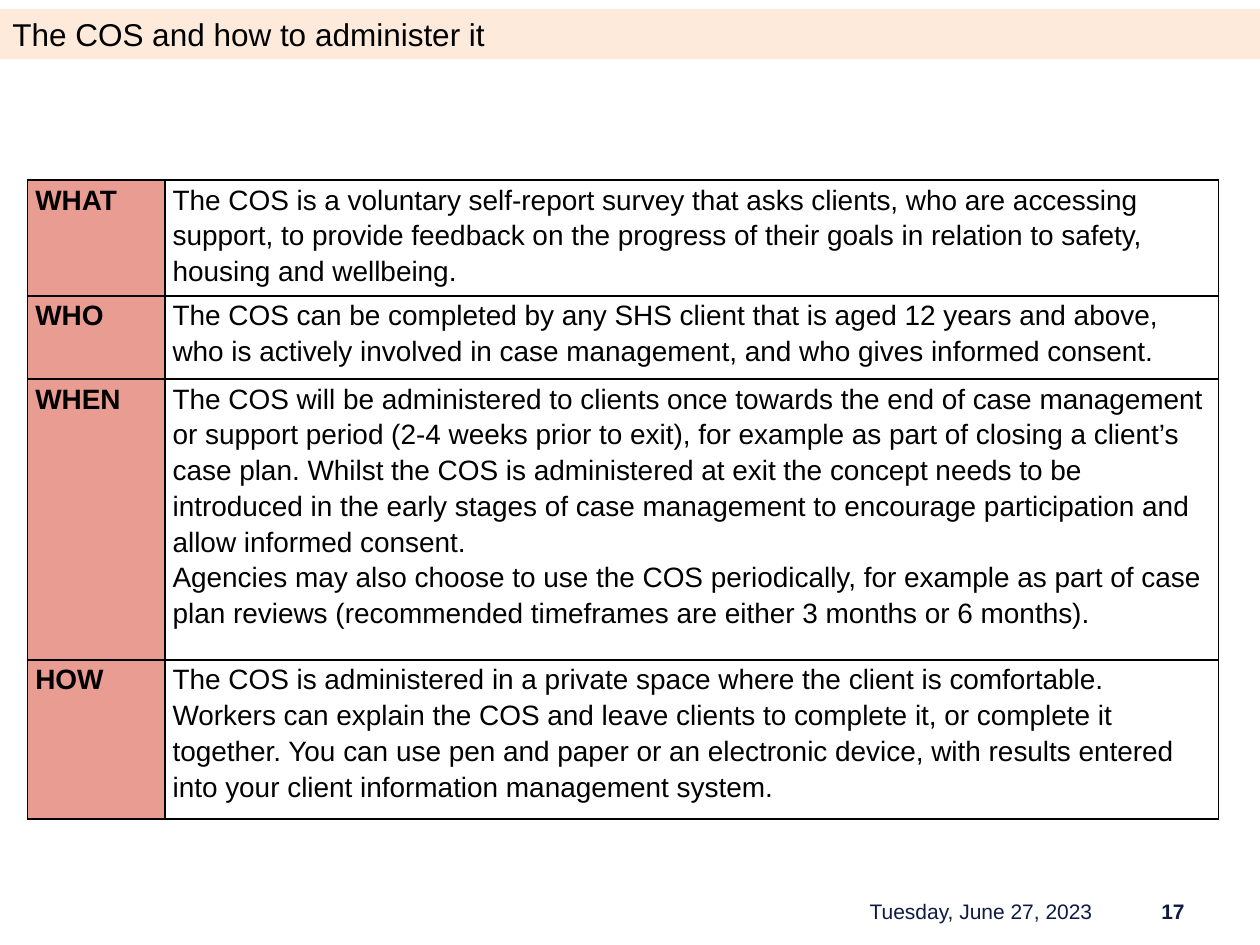
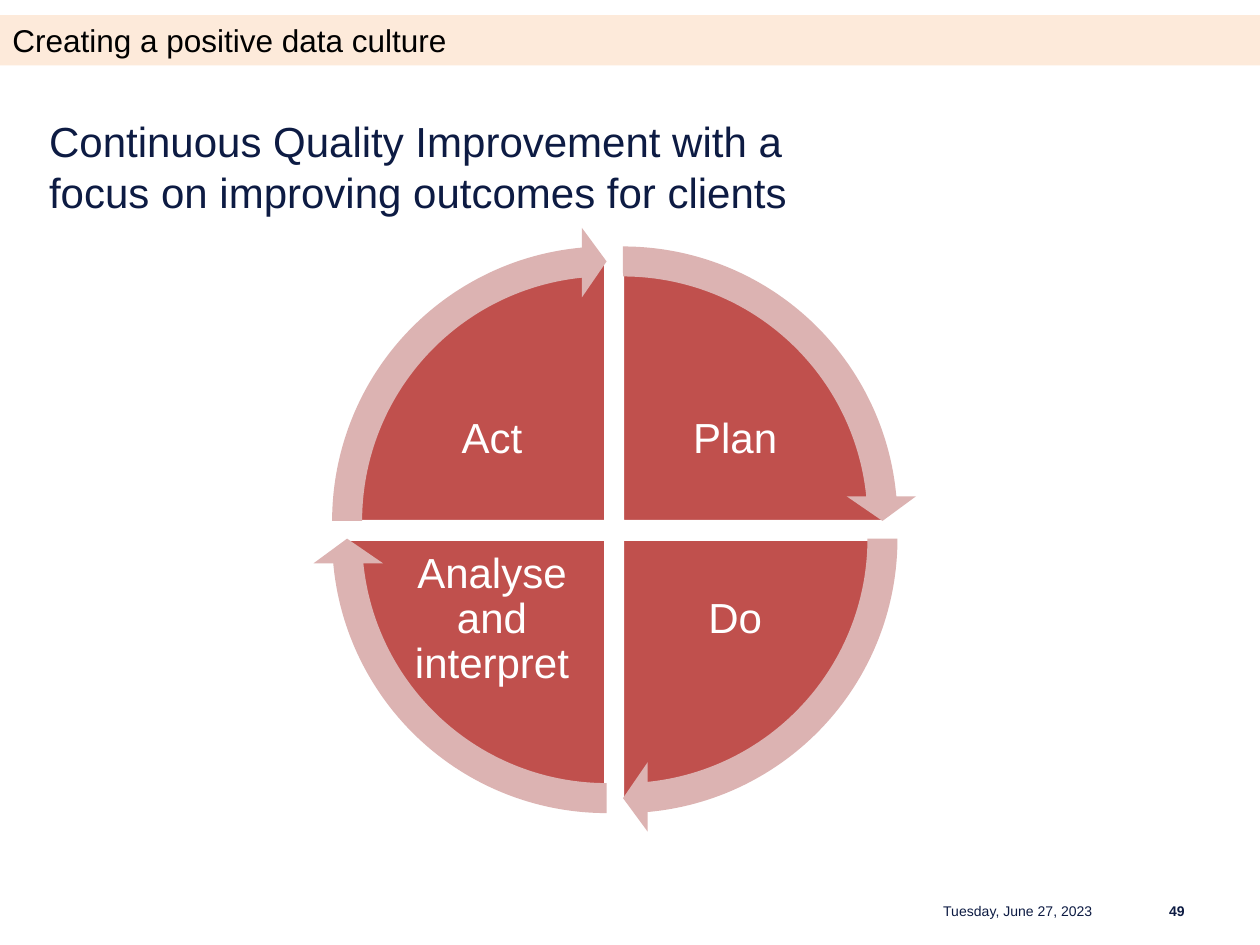
import pptx
import pptx.util
import pptx.dml.color
import pptx.enum.shapes
import pptx.enum.text
import pptx.oxml
import pptx.oxml.ns

Inches = pptx.util.Inches
Pt = pptx.util.Pt
RGBColor = pptx.dml.color.RGBColor
MSO_SHAPE = pptx.enum.shapes.MSO_SHAPE
PP_ALIGN = pptx.enum.text.PP_ALIGN
MSO_ANCHOR = pptx.enum.text.MSO_ANCHOR

FONT = "Arial"
NAVY = RGBColor(0x0D, 0x1B, 0x43)
BLACK = RGBColor(0, 0, 0)
WHITE = RGBColor(0xFF, 0xFF, 0xFF)
PEACH = RGBColor(0xFD, 0xEA, 0xDA)
SALMON = RGBColor(0xE9, 0x9C, 0x92)
BRICK = RGBColor(0xC0, 0x50, 0x4D)
ROSE = RGBColor(0xDC, 0xB3, 0xB2)


def write(frame, text, size, color, bold=False, align=PP_ALIGN.LEFT, spacing=1.0,
          anchor=MSO_ANCHOR.TOP):
    frame.word_wrap = True
    frame.vertical_anchor = anchor
    frame.text = text
    for paragraph in frame.paragraphs:
        paragraph.alignment = align
        paragraph.line_spacing = spacing
        for run in paragraph.runs:
            run.font.name = FONT
            run.font.size = Pt(size)
            run.font.bold = bold
            run.font.color.rgb = color


def add_plain_shape(slide, kind, left, top, width, height, fill):
    shape = slide.shapes.add_shape(kind, Inches(left), Inches(top), Inches(width), Inches(height))
    shape.shadow.inherit = False
    shape.fill.solid()
    shape.fill.fore_color.rgb = fill
    shape.line.fill.background()
    return shape


deck = pptx.Presentation()
deck.slide_width = Inches(10)
deck.slide_height = Inches(7.5)

pages = [
    ("The COS and how to administer it", 0.07, "17", 12, 1.0),
    ("Creating a positive data culture", 0.12, "49", 8, 0.9),
]
slides = []
for heading, band_top, number, footer_size, footer_spacing in pages:
    slide = deck.slides.add_slide(deck.slide_layouts[6])
    band = add_plain_shape(slide, MSO_SHAPE.RECTANGLE, 0, band_top, 10, 0.4, PEACH)
    write(band.text_frame, heading, 18, BLACK)
    for text, left, width, bold in [(number, 8.68, 0.82, True),
                                    ("Tuesday, June 27, 2023", 6.44, 2.33, False)]:
        footer = slide.shapes.add_textbox(Inches(left), Inches(7.12), Inches(width), Inches(0.23))
        write(footer.text_frame, text, footer_size, NAVY, bold, PP_ALIGN.RIGHT,
              footer_spacing, MSO_ANCHOR.MIDDLE)
    slides.append(slide)
survey_slide, culture_slide = slides

survey_rows = [
    ("WHAT", 0.84,
     "The COS is a voluntary self-report survey that asks clients, who are accessing support, "
     "to provide feedback on the progress of their goals in relation to safety, housing and "
     "wellbeing."),
    ("WHO", 0.66,
     "The COS can be completed by any SHS client that is aged 12 years and above, who is "
     "actively involved in case management, and who gives informed consent."),
    ("WHEN", 2.23,
     "The COS will be administered to clients once towards the end of case management or "
     "support period (2-4 weeks prior to exit), for example as part of closing a client’s case "
     "plan. Whilst the COS is administered at exit the concept needs to be introduced in the "
     "early stages of case management to encourage participation and allow informed consent.\n"
     "Agencies may also choose to use the COS periodically, for example as part of case plan "
     "reviews (recommended timeframes are either 3 months or 6 months)."),
    ("HOW", 1.26,
     "The COS is administered in a private space where the client is comfortable. Workers can "
     "explain the COS and leave clients to complete it, or complete it together. You can use "
     "pen and paper or an electronic device, with results entered into your client information "
     "management system."),
]
survey_frame = survey_slide.shapes.add_table(
    len(survey_rows), 2, Inches(0.22), Inches(1.43), Inches(9.45), Inches(4.99))
survey = survey_frame.table
survey.first_row = False
survey.horz_banding = False
survey.columns[0].width = Inches(1.09)
survey.columns[1].width = Inches(8.36)
for row, (question, height, answer) in zip(survey.rows, survey_rows):
    row.height = Inches(height)
    for cell, text, is_question in zip(row.cells, (question, answer), (True, False)):
        cell.margin_left = cell.margin_right = Inches(0.06)
        cell.margin_top = cell.margin_bottom = 0
        write(cell.text_frame, text, 16, BLACK, is_question, spacing=1.15)
        properties = cell._tc.get_or_add_tcPr()
        for side in ("lnL", "lnR", "lnT", "lnB"):
            properties.append(pptx.oxml.parse_xml(
                f'<a:{side} {pptx.oxml.ns.nsdecls("a")} w="12700"><a:solidFill>'
                f'<a:srgbClr val="{BLACK}"/></a:solidFill></a:{side}>'))
        if is_question:
            cell.fill.solid()
            cell.fill.fore_color.rgb = SALMON
        else:
            cell.fill.background()

subtitle = culture_slide.shapes.add_textbox(Inches(0.39), Inches(0.92), Inches(6.66), Inches(0.66))
subtitle_text = subtitle.text_frame
subtitle_text.margin_left = subtitle_text.margin_right = 0
subtitle_text.margin_top = subtitle_text.margin_bottom = 0
write(subtitle_text,
      "Continuous Quality Improvement with a focus on improving outcomes for clients", 24, NAVY)

QUARTER = 54
HEAD_ANGLE = 3.275
right, left = (2.86, 5.07), (2.73, 3.14)
upper, lower = (2.06, 2.92), (2.2, 4.35)
stages = [
    ("Plan", right, upper, 3),
    ("Do", right, lower, 0),
    ("Analyse and interpret", left, lower, 1),
    ("Act", left, upper, 2),
]
for stage, (pie_left, label_left), (pie_top, label_top), turn in stages:
    start = turn * QUARTER
    quadrant = add_plain_shape(culture_slide, MSO_SHAPE.PIE, pie_left, pie_top, 4.16, 4.16, BRICK)
    quadrant.adjustments[0] = start
    quadrant.adjustments[1] = (turn + 1) % 4 * QUARTER
    quadrant.line.color.rgb = WHITE
    quadrant.line.width = Pt(2)
    label = culture_slide.shapes.add_textbox(
        Inches(label_left), Inches(label_top), Inches(1.53), Inches(1.14))
    label_text = label.text_frame
    label_text.margin_left = label_text.margin_right = Inches(0.03)
    label_text.margin_top = label_text.margin_bottom = Inches(0.03)
    write(label_text, stage, 24, WHITE, align=PP_ALIGN.CENTER, spacing=0.9,
          anchor=MSO_ANCHOR.MIDDLE)

for stage, (pie_left, _), (pie_top, _), turn in stages:
    start = turn * QUARTER
    arrow = add_plain_shape(culture_slide, MSO_SHAPE.CIRCULAR_ARROW,
                            pie_left - 0.25, pie_top - 0.26, 4.67, 4.67, ROSE)
    sweep = (0.051, HEAD_ANGLE, start + QUARTER - HEAD_ANGLE, start, 0.059)
    for index, value in enumerate(sweep):
        arrow.adjustments[index] = value

deck.save("out.pptx")
